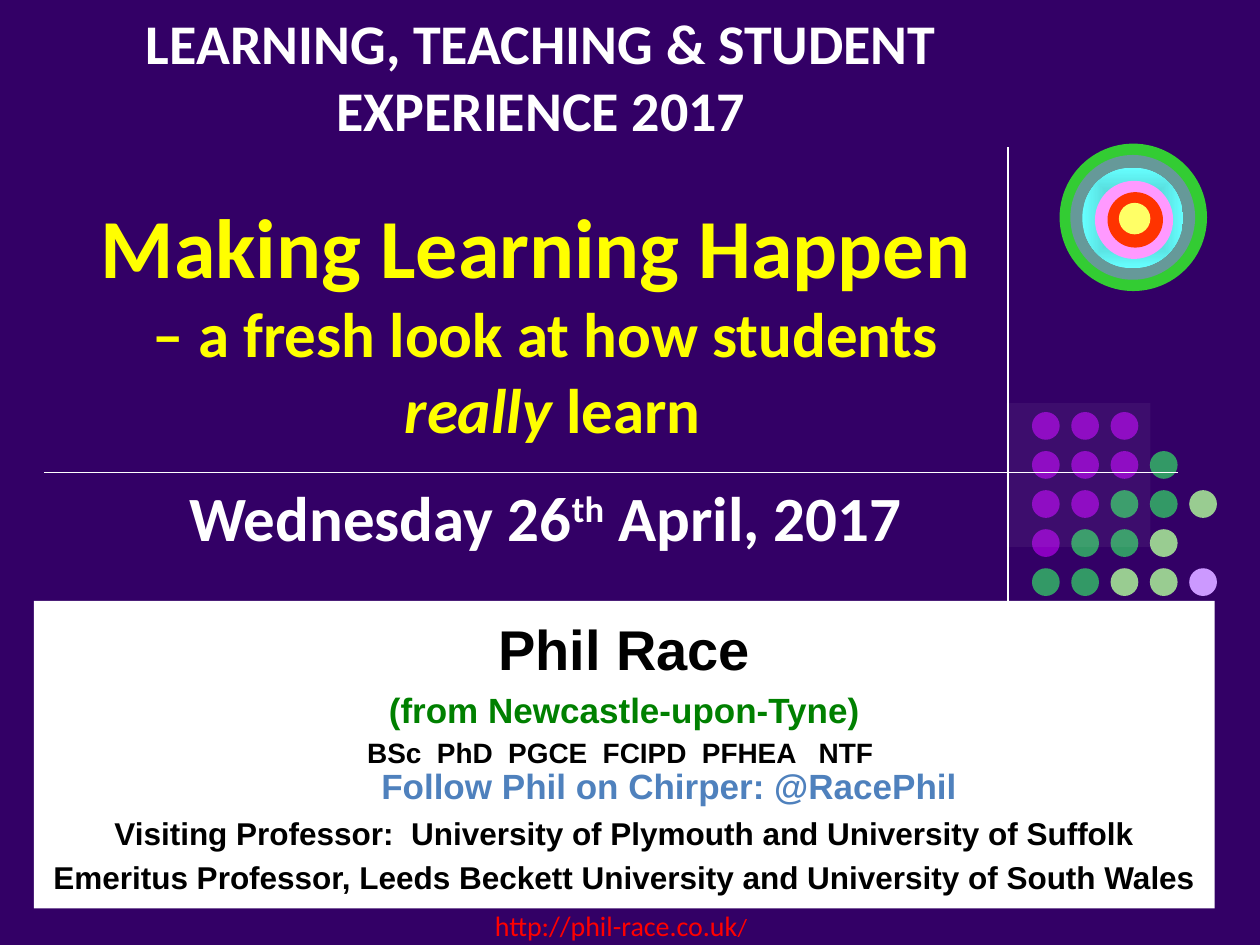
from lxml import etree
from pptx import Presentation
from pptx.dml.color import RGBColor
from pptx.enum.shapes import MSO_CONNECTOR, MSO_SHAPE
from pptx.enum.text import MSO_ANCHOR, PP_ALIGN
from pptx.oxml.ns import qn
from pptx.util import Inches, Pt

OVAL, RECT, PANEL = MSO_SHAPE.OVAL, MSO_SHAPE.RECTANGLE, MSO_SHAPE.ACTION_BUTTON_CUSTOM
LINE = MSO_CONNECTOR.STRAIGHT
TOP, MID, LOW = MSO_ANCHOR.TOP, MSO_ANCHOR.MIDDLE, MSO_ANCHOR.BOTTOM
LEFT, MIDST = PP_ALIGN.LEFT, PP_ALIGN.CENTER
COLS, ROWS = 100, 75
WHITE, BLACK, GOLD = "FFFFFF", "000000", "FFFF00"
DOTS = ["PPP", "PPPG", "PPGGL", "PGGL", "GGLLV"]
TINTS = {"P": "8A00C0", "G": "339966", "L": "99CC91", "V": "CC99FF"}
RINGS = [
    (89.95, 17.25, 11.7, "33CC33"),
    (89.9, 17.25, 9.9, "669999"),
    (89.9, 17.3, 8, ("47B2B2", "66FFFF")),
    (90, 17.45, 6.2, "FF99FF"),
    (90.1, 17.45, 4.4, "FF3300"),
    (90.05, 17.35, 2.5, "FFFF66"),
]


def tint(code):
    """Turn a hex string into a colour."""
    return RGBColor.from_string(code)


class Deck:
    """Holds the style and the current slide, on a grid of 100 by 75."""

    def __init__(self, back):
        """Open a blank slide with a plain background."""
        self.show = Presentation()
        self.show.slide_width, self.show.slide_height = Inches(10), Inches(7.5)
        self.slide = self.show.slides.add_slide(self.show.slide_layouts[6])
        fill = self.slide.background.fill
        fill.solid()
        fill.fore_color.rgb = tint(back)

    def grid(self, *cells):
        """Turn alternating columns and rows into lengths."""
        wide, high = self.show.slide_width / COLS, self.show.slide_height / ROWS
        return [int(n * (high if i % 2 else wide)) for i, n in enumerate(cells)]

    def rule(self, ends, weight):
        """Draw a thin white line."""
        line = self.slide.shapes.add_connector(LINE, *self.grid(*ends))
        line.line.color.rgb = tint(WHITE)
        line.line.width = Pt(weight)
        etree.SubElement(line._element.spPr, qn("a:effectLst"))

    def form(self, kind, area, code, alpha=None):
        """Draw a filled shape without outline."""
        shape = self.slide.shapes.add_shape(kind, *self.grid(*area))
        shape.shadow.inherit = False
        shape.line.fill.background()
        if isinstance(code, tuple):
            self.glow(shape.fill, shape._element.spPr, code)
        else:
            shape.fill.solid()
            shape.fill.fore_color.rgb = tint(code)
        if alpha is not None:
            node = shape._element.spPr.find(".//" + qn("a:srgbClr"))
            etree.SubElement(node, qn("a:alpha"), val=str(alpha * 1000))
        return shape

    def glow(self, fill, props, codes):
        """Blend two colours from the centre outwards."""
        fill.gradient()
        for stop, code in zip(fill.gradient_stops, codes):
            stop.color.rgb = tint(code)
        grad = props.find(qn("a:gradFill"))
        grad.remove(grad.find(qn("a:lin")))
        way = etree.SubElement(grad, qn("a:path"), {"path": "shape"})
        sides = dict.fromkeys("ltrb", "50000")
        etree.SubElement(way, qn("a:fillToRect"), sides)

    def box(self, area):
        """Add an empty text box."""
        return self.slide.shapes.add_textbox(*self.grid(*area))

    def text(self, shape, paras, face, anchor=TOP, align=MIDST):
        """Fill a shape with paragraphs of runs."""
        frame = shape.text_frame
        frame.word_wrap = True
        frame.vertical_anchor = anchor
        for i, runs in enumerate(paras):
            para = frame.paragraphs[0] if i == 0 else frame.add_paragraph()
            para.alignment = align
            for run in runs:
                self.run(para, face, *run)
        return frame

    def run(self, para, face, words, size, code, bold=True, slant=False, base=0):
        """Add one run, with a line break at each newline."""
        for i, part in enumerate(words.split("\n")):
            if i:
                para.add_line_break()
            run = para.add_run()
            run.text = part
            font = run.font
            font.name, font.size = face, Pt(size)
            font.bold, font.italic = bold, slant
            font.color.rgb = tint(code)
            if base:
                run._r.get_or_add_rPr().set("baseline", str(base * 1000))


def main():
    """Build the title slide."""
    deck = Deck("330066")
    deck.rule((80, 11.7, 80, 60.8), 0.75)
    for row, marks in enumerate(DOTS):
        for col, mark in enumerate(marks):
            area = (81.9 + 3.12 * col, 32.7 + 3.1 * row, 2.2, 2.2)
            deck.form(OVAL, area, TINTS[mark])
    deck.rule((3.5, 37.5, 93.5, 37.5), 0.5)
    for x, y, size, code in RINGS:
        deck.form(OVAL, (x - size / 2, y - size / 2, size, size), code)

    link = [("http://phil-race.co.uk", 16, "FF0000", False), ("/", 14, "FF0000", False)]
    deck.text(deck.box((38.3, 71.6, 28.9, 6.1)), [link], "Calibri", align=LEFT)
    title = [
        ("Making Learning Happen \n", 48, GOLD),
        ("– a fresh look at how students\n ", 36, GOLD),
        ("really", 36, GOLD, True, True),
        (" learn", 36, GOLD),
    ]
    deck.text(deck.box((6.7, 10.7, 73.2, 25.2)), [title], "Calibri", LOW)
    event = [("LEARNING, TEACHING & STUDENT EXPERIENCE 2017", 32, WHITE)]
    deck.text(deck.box((6.7, 0.2, 72.5, 8.7)), [event], "Calibri")

    bio = [
        ("Phil Race", 32, BLACK),
        ("(from Newcastle-upon-Tyne)", 20, "008000"),
        ("BSc  PhD  PGCE  FCIPD  PFHEA   NTF ", 16, BLACK),
        ("Follow Phil on Chirper: @RacePhil ", 20, "4F81BD"),
        ("Visiting Professor:  University of Plymouth and University of Suffolk", 18, BLACK),
        ("Emeritus Professor, Leeds Beckett University and University of South Wales", 18, BLACK),
    ]
    card = deck.form(RECT, (2.7, 47.7, 93.7, 24.4), WHITE)
    frame = deck.text(card, [[run] for run in bio], "Arial", MID)
    for para, run in zip(frame.paragraphs, bio):
        para.space_before = Pt(0.2 * run[1])
    follow = frame.paragraphs[3]
    follow.space_before, follow.line_spacing = Pt(0), 0.9
    follow._p.get_or_add_pPr().set("marL", str(Inches(0.79)))

    deck.form(PANEL, (79.9, 32, 11.4, 11.4), WHITE, 5)
    date = [
        ("Wednesday 26", 36, WHITE),
        ("th", 36, WHITE, True, False, 30),
        (" April, 2017", 36, WHITE),
    ]
    deck.text(deck.box((11, 37.5, 64.6, 7.1)), [date], "Calibri")
    deck.show.save("out.pptx")


if __name__ == "__main__":
    main()
